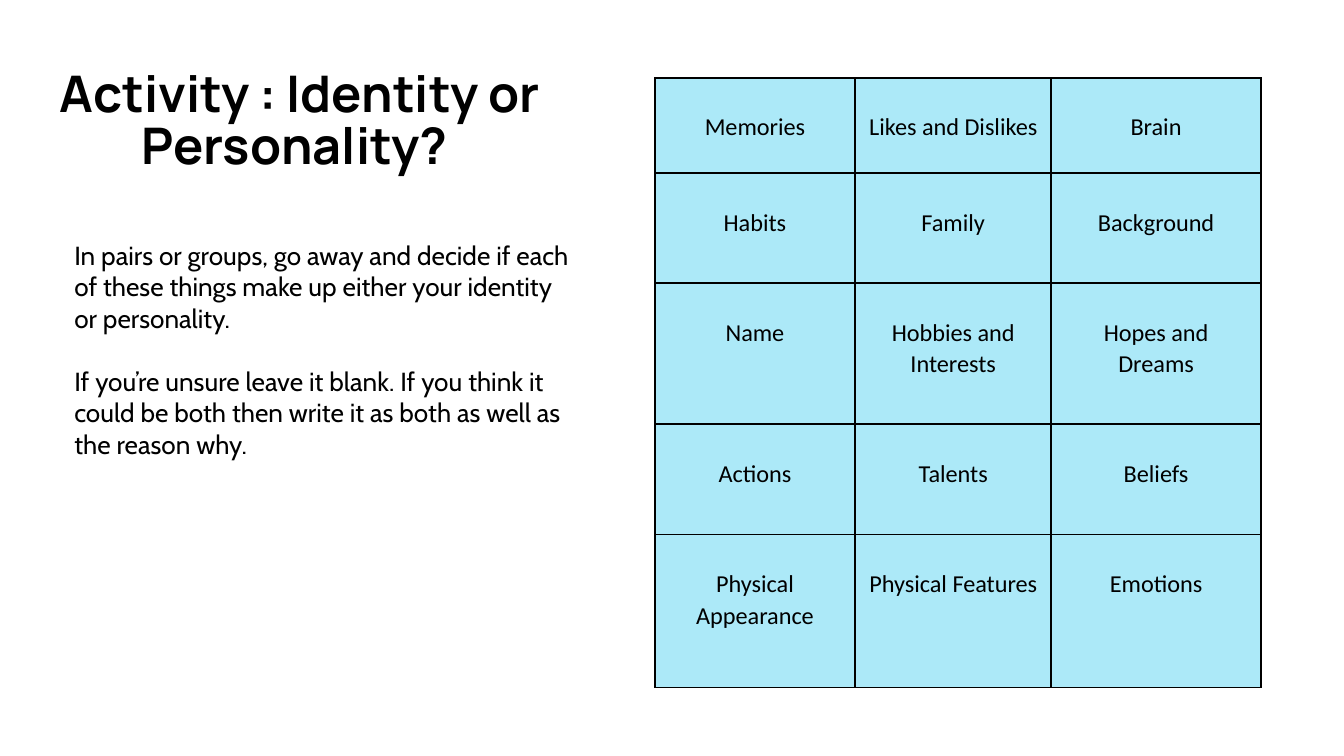
from dataclasses import dataclass
from lxml import etree
from pptx import Presentation
from pptx.dml.color import RGBColor
from pptx.enum.text import MSO_ANCHOR, MSO_AUTO_SIZE, PP_ALIGN
from pptx.oxml.ns import qn
from pptx.util import Pt

CENTER, LEFT = PP_ALIGN.CENTER, PP_ALIGN.LEFT
TOP = MSO_ANCHOR.TOP
FIXED = MSO_AUTO_SIZE.NONE


@dataclass(frozen=True)
class Theme:
    ink: str = "000000"
    cell: str = "ACE9F8"
    head_font: str = "Manrope"
    head_size: float = 27
    body_font: str = "Cabin"
    body_size: float = 14
    grid_font: str = "Calibri"
    grid_size: float = 13


THEME = Theme()

TITLE = "Activity : Identity or Personality? "
STEPS = [
    "In pairs or groups, go away and decide if each of these things "
    "make up either your identity or personality.",
    "If you’re unsure leave it blank. If you think it could be both "
    "then write it as both as well as the reason why.",
]
TRAITS = [
    ["Memories", "Likes and Dislikes", "Brain"],
    ["Habits", "Family", "Background"],
    ["Name", "Hobbies and Interests", "Hopes and\nDreams"],
    ["Actions", "Talents", "Beliefs"],
    ["Physical Appearance", "Physical Features", "Emotions"],
]
COLS = [107.3, 105.1, 112.3]
ROWS = [51, 59, 75.6, 59, 82]


def add_run(par, text, font, size, bold=False):
    """Add styled text, turning each newline into a line break."""
    for i, line in enumerate(text.split("\n")):
        if i:
            par.add_line_break()
        run = par.add_run()
        run.text = line
        run.font.name = font
        run.font.size = Pt(size)
        run.font.bold = bold
        run.font.color.rgb = RGBColor.from_string(THEME.ink)


def set_box(shape, box, top=7.2):
    """Move a placeholder to box and give its text frame fixed insets."""
    shape.left, shape.top, shape.width, shape.height = map(Pt, box)
    frame = shape.text_frame
    frame.word_wrap = True
    frame.auto_size = FIXED
    frame.vertical_anchor = TOP
    frame.margin_left = frame.margin_right = frame.margin_bottom = Pt(7.2)
    frame.margin_top = Pt(top)
    return frame


def fill_title(shape, box):
    par = set_box(shape, box, top=11).paragraphs[0]
    par.alignment = CENTER
    par.line_spacing = 0.87
    add_run(par, TITLE, THEME.head_font, THEME.head_size, bold=True)


def fill_steps(shape, box):
    frame = set_box(shape, box)
    for i, text in enumerate(STEPS):
        par = frame.add_paragraph() if i else frame.paragraphs[0]
        par.alignment = LEFT
        par.space_before = Pt(17 if i else 0)
        props = par._p.get_or_add_pPr()
        props.set("marL", "0")
        props.set("indent", "0")
        etree.SubElement(props, qn("a:buNone"))
        add_run(par, text, THEME.body_font, THEME.body_size)


def add_edges(cell):
    props = cell._tc.get_or_add_tcPr()
    for i, side in enumerate(("lnL", "lnR", "lnT", "lnB")):
        line = etree.Element(qn("a:" + side), w=str(Pt(1)))
        fill = etree.SubElement(line, qn("a:solidFill"))
        etree.SubElement(fill, qn("a:srgbClr"), val=THEME.ink)
        props.insert(i, line)


def fill_cell(cell, text):
    cell.fill.solid()
    cell.fill.fore_color.rgb = RGBColor.from_string(THEME.cell)
    cell.margin_left = cell.margin_right = Pt(3.6)
    cell.margin_top, cell.margin_bottom = Pt(17.7), Pt(7.2)
    cell.vertical_anchor = TOP
    par = cell.text_frame.paragraphs[0]
    par.alignment = CENTER
    par.line_spacing = 1.07
    add_run(par, text, THEME.grid_font, THEME.grid_size)
    add_edges(cell)


def add_traits(slide, left, top):
    box = map(Pt, (left, top, sum(COLS), sum(ROWS)))
    grid = slide.shapes.add_table(len(ROWS), len(COLS), *box).table
    grid.first_row = grid.horz_banding = False
    for col, width in zip(grid.columns, COLS):
        col.width = Pt(width)
    for row, height, texts in zip(grid.rows, ROWS, TRAITS):
        row.height = Pt(height)
        for cell, text in zip(row.cells, texts):
            fill_cell(cell, text)


def main():
    deck = Presentation()
    deck.slide_width, deck.slide_height = Pt(720), Pt(405)
    slide = deck.slides.add_slide(deck.slide_layouts[1])
    fill_title(slide.shapes.title, (20, 26.6, 281, 49))
    add_traits(slide, 350.8, 41.7)
    fill_steps(slide.placeholders[1], (32.6, 121, 281, 133))
    deck.save("out.pptx")


if __name__ == "__main__":
    main()
